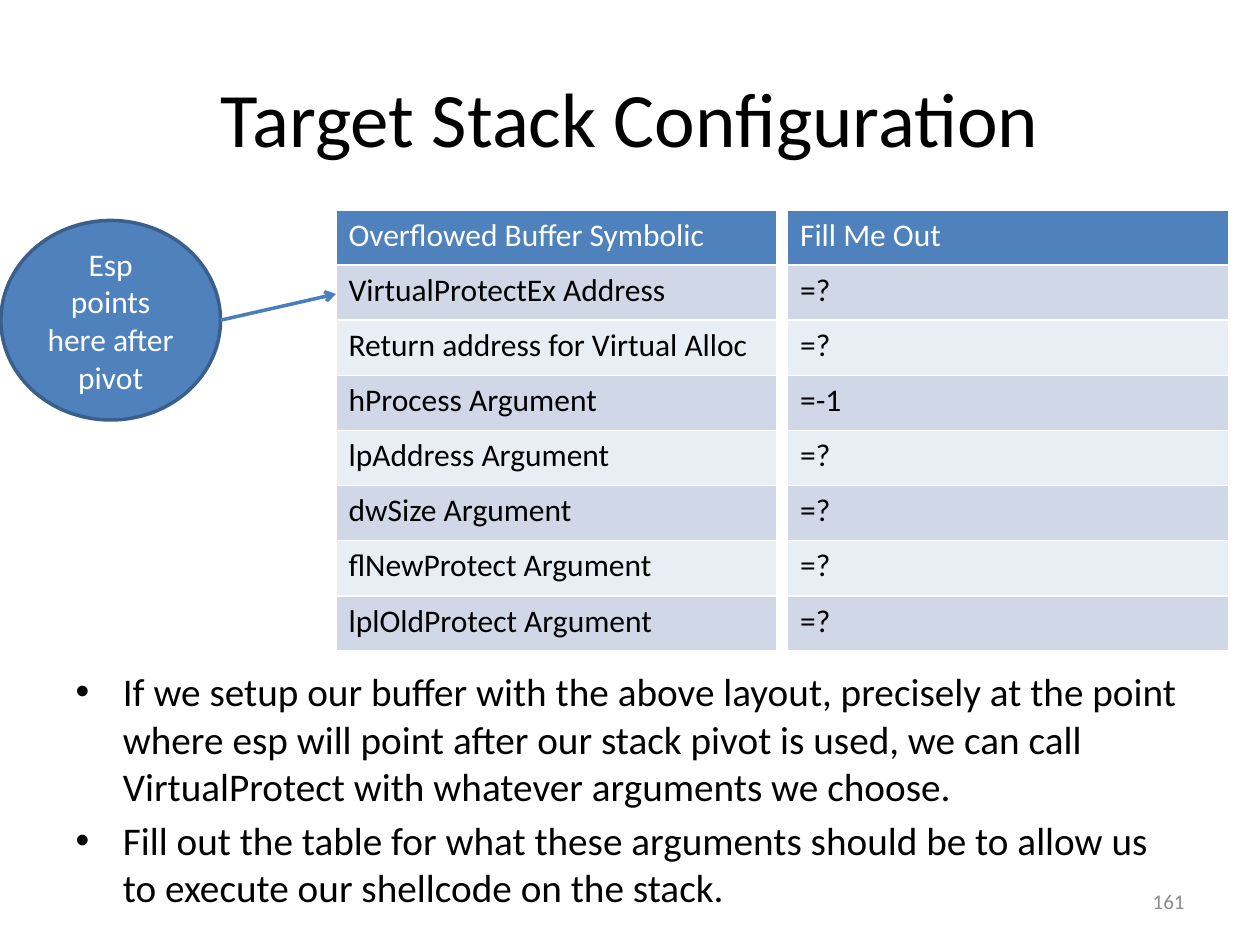
"""Build the target stack configuration slide with its two fill-in tables."""
from lxml.etree import SubElement
from pptx import Presentation
from pptx.dml.color import RGBColor
from pptx.enum.shapes import MSO_CONNECTOR, MSO_SHAPE
from pptx.enum.text import MSO_ANCHOR, MSO_AUTO_SIZE, PP_ALIGN
from pptx.oxml.ns import qn
from pptx.util import Pt


def color(hex_string):
    return RGBColor.from_string(hex_string)


class SlideBuilder:
    font = "Calibri"
    black, white, gray = "000000", "FFFFFF", "8C8C8C"
    accent, outline, arrow = "4F81BD", "3A5F8C", "4B7EBC"
    bands = ("D0D8E8", "E9EDF4")

    def __init__(self, deck):
        self.slide = deck.slides.add_slide(deck.slide_layouts[1])

    def style(self, frame, size, hex_string, align=None):
        for paragraph in frame.paragraphs:
            if align is not None:
                paragraph.alignment = align
            for run in paragraph.runs:
                run.font.name = self.font
                run.font.size = Pt(size)
                run.font.bold = False
                run.font.color.rgb = color(hex_string)

    def place(self, holder, left, top, width, height):
        holder.left, holder.top = Pt(left), Pt(top)
        holder.width, holder.height = Pt(width), Pt(height)

    def title(self, text, *box):
        heading = self.slide.shapes.title
        self.place(heading, *box)
        heading.text_frame.text = text
        heading.text_frame.vertical_anchor = MSO_ANCHOR.MIDDLE
        self.style(heading.text_frame, 44, self.black, PP_ALIGN.CENTER)

    def bullets(self, items, *box):
        body = self.slide.placeholders[1]
        self.place(body, *box)
        body.text_frame.text = "\n".join(items)
        body.text_frame.auto_size = MSO_AUTO_SIZE.NONE
        self.style(body.text_frame, 22.4, self.black)

    def table(self, entries, left, top, width, height):
        grid = self.slide.shapes.add_table(
            len(entries), 1, Pt(left), Pt(top), Pt(width), Pt(height)).table
        for index, entry in enumerate(entries):
            cell = grid.cell(index, 0)
            cell.text_frame.text = entry
            cell.fill.solid()
            header = index == 0
            cell.fill.fore_color.rgb = color(
                self.accent if header else self.bands[(index - 1) % 2])
            self.style(cell.text_frame, 18, self.white if header else self.black)

    def callout(self, text, *box):
        ellipse = self.slide.shapes.add_shape(MSO_SHAPE.OVAL, *map(Pt, box))
        ellipse.shadow.inherit = False
        ellipse.fill.solid()
        ellipse.fill.fore_color.rgb = color(self.accent)
        ellipse.line.color.rgb = color(self.outline)
        ellipse.line.width = Pt(2)
        ellipse.text_frame.text = text
        ellipse.text_frame.word_wrap = True
        ellipse.text_frame.vertical_anchor = MSO_ANCHOR.MIDDLE
        self.style(ellipse.text_frame, 18, self.white, PP_ALIGN.CENTER)

    def pointer(self, *ends):
        line = self.slide.shapes.add_connector(
            MSO_CONNECTOR.STRAIGHT, *map(Pt, ends))
        line.line.color.rgb = color(self.arrow)
        line.line.width = Pt(2)
        SubElement(line.line._get_or_add_ln(), qn("a:tailEnd"), type="arrow")
        SubElement(line._element.spPr, qn("a:effectLst"))

    def page_number(self, text, *box):
        number = self.slide.shapes.add_textbox(*map(Pt, box)).text_frame
        number.word_wrap = True
        number.vertical_anchor = MSO_ANCHOR.MIDDLE
        number.text = text
        self.style(number, 12, self.gray, PP_ALIGN.RIGHT)


def main():
    deck = Presentation()
    deck.slide_width, deck.slide_height = Pt(720), Pt(540)
    builder = SlideBuilder(deck)
    builder.title("Target Stack Configuration", 36, 21.6, 648, 90)
    builder.bullets([
        "If we setup our buffer with the above layout, precisely at the point "
        "where esp will point after our stack pivot is used, we can call "
        "VirtualProtect with whatever arguments we choose.",
        "Fill out the table for what these arguments should be to allow us "
        "to execute our shellcode on the stack.",
    ], 36, 378, 648, 144)
    stack = [
        ("Overflowed Buffer Symbolic", "Fill Me Out"),
        ("VirtualProtectEx Address", "=?"),
        ("Return address for Virtual Alloc", "=?"),
        ("hProcess Argument", "=-1"),
        ("lpAddress Argument", "=?"),
        ("dwSize Argument", "=?"),
        ("flNewProtect Argument", "=?"),
        ("lplOldProtect Argument", "=?"),
    ]
    for entries, left in zip(zip(*stack), (192, 450)):
        builder.table(entries, left, 120, 252, 252)
    builder.callout("Esp points here after pivot", 0.5, 126, 125.5, 114)
    builder.pointer(126, 183, 192, 168)
    builder.page_number("161", 516, 500.5, 168, 28.75)
    deck.save("out.pptx")


if __name__ == "__main__":
    main()
